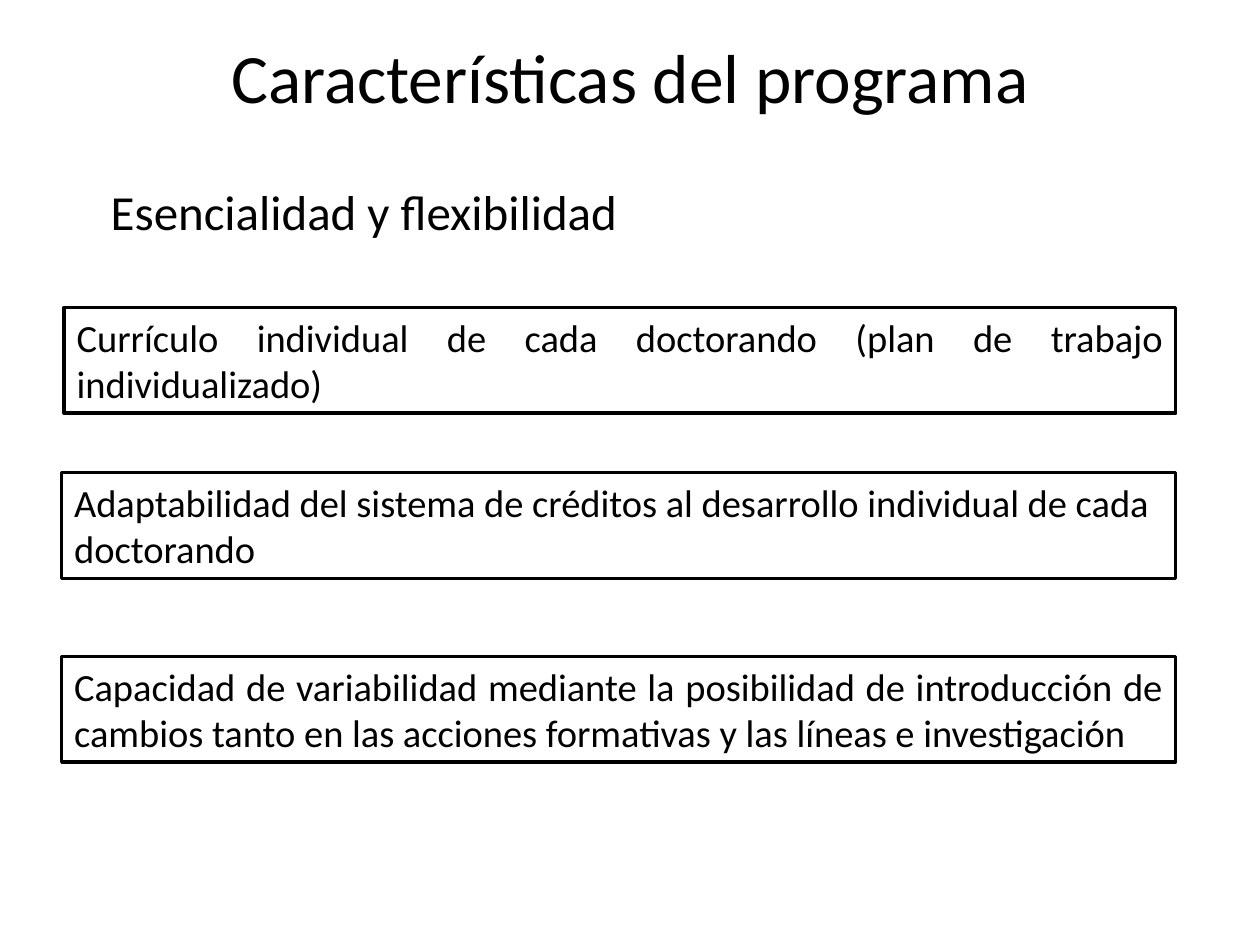
from pptx import Presentation
from pptx.dml.color import RGBColor
from pptx.enum import shapes, text
from pptx.util import Pt

FONT = "Calibri"
COLORS = {"ink": "000000", "paper": "FFFFFF"}
LEFT, CENTER, JUSTIFY = (text.PP_ALIGN.LEFT, text.PP_ALIGN.CENTER,
                         text.PP_ALIGN.JUSTIFY)

# Content
TITLE = "Características del programa"
SUBTITLE = "Esencialidad y flexibilidad"
# Left, top, alignment, wording
FEATURES = [
    (36.7, 175.7, JUSTIFY,
     "Currículo individual de cada doctorando (plan de trabajo individualizado)"),
    (35.3, 270, LEFT,
     "Adaptabilidad del sistema de créditos al desarrollo individual de cada "
     "doctorando"),
    (35.3, 375.1, JUSTIFY,
     "Capacidad de variabilidad mediante la posibilidad de introducción de "
     "cambios tanto en las acciones formativas y las líneas e investigación"),
]
FEATURE_RIGHT, FEATURE_HEIGHT = 671.8, 60.5


def color(name):
    return RGBColor.from_string(COLORS[name])


def write(sp, words, size, align=LEFT, anchor=text.MSO_ANCHOR.TOP, wrap=True):
    tf = sp.text_frame
    tf.word_wrap = wrap
    tf.vertical_anchor = anchor
    p = tf.paragraphs[0]
    p.alignment = align
    r = p.add_run()
    r.text = words
    r.font.name = FONT
    r.font.size = Pt(size)
    r.font.color.rgb = color("ink")


prs = Presentation()
prs.slide_width, prs.slide_height = Pt(720), Pt(540)
s = prs.slides.add_slide(prs.slide_layouts[6])

# Headings
title = s.shapes.add_textbox(Pt(36), Pt(21.6), Pt(648), Pt(44))
write(title, TITLE, 39.6, CENTER, text.MSO_ANCHOR.MIDDLE)
subtitle = s.shapes.add_textbox(Pt(56.2), Pt(100), Pt(306.7), Pt(41.2))
write(subtitle, SUBTITLE, 28, wrap=False)

# Framed features, sharing one right edge
for left, top, align, words in FEATURES:
    sp = s.shapes.add_shape(shapes.MSO_SHAPE.RECTANGLE, Pt(left), Pt(top),
                            Pt(FEATURE_RIGHT - left), Pt(FEATURE_HEIGHT))
    sp.shadow.inherit = False
    sp.fill.solid()
    sp.fill.fore_color.rgb = color("paper")
    sp.line.color.rgb = color("ink")
    sp.line.width = Pt(2)
    write(sp, words, 22, align)

prs.save("out.pptx")
